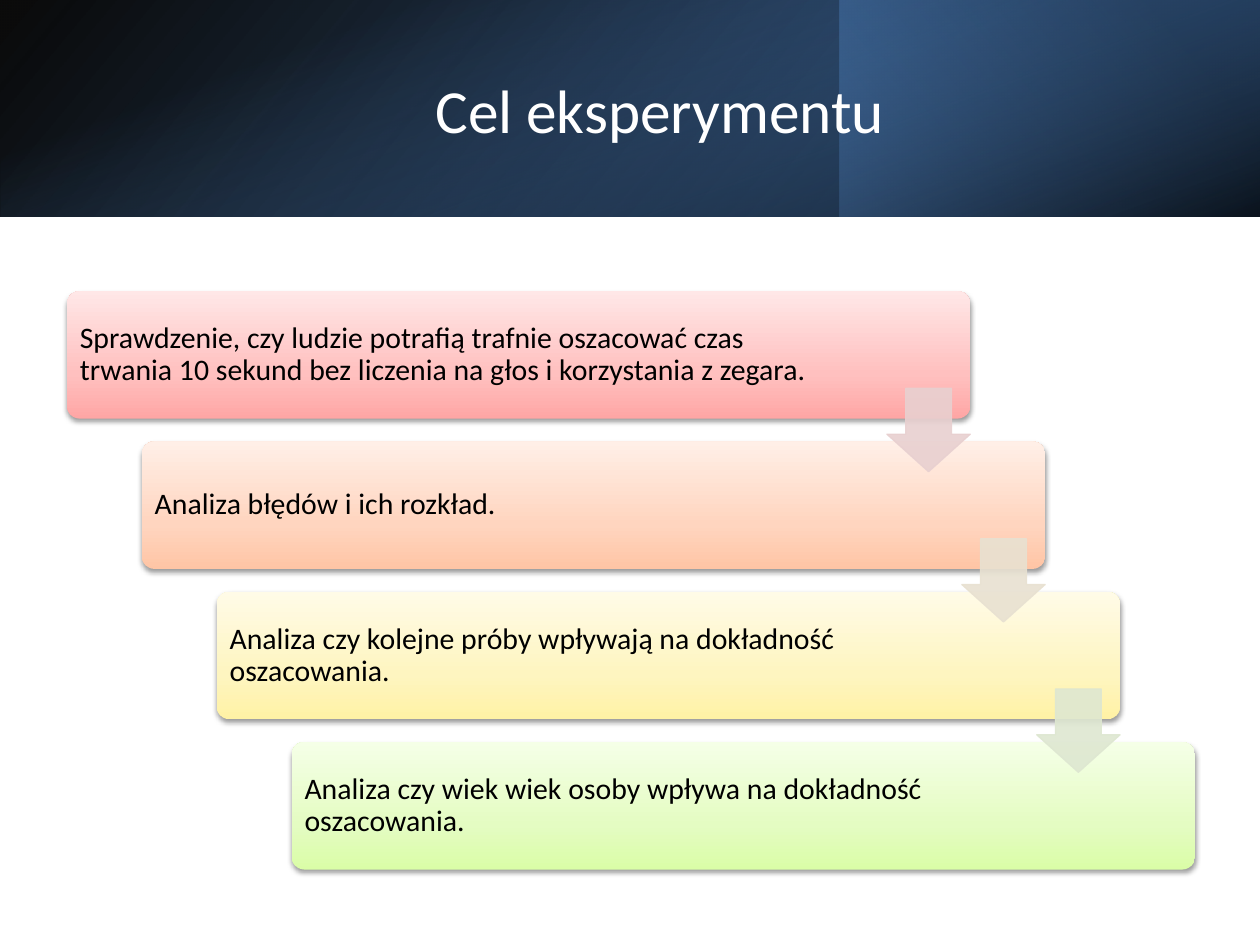
from pptx import Presentation
from pptx.dml.color import RGBColor
from pptx.enum.shapes import MSO_SHAPE
from pptx.enum.text import MSO_ANCHOR, PP_ALIGN
from pptx.oxml import parse_xml
from pptx.oxml.ns import nsdecls, qn
from pptx.util import Cm, Pt

RECTANGLE = MSO_SHAPE.RECTANGLE
ROUNDED = MSO_SHAPE.ROUNDED_RECTANGLE
DOWN_ARROW = MSO_SHAPE.DOWN_ARROW
MIDDLE = MSO_ANCHOR.MIDDLE
LEFT, CENTER = PP_ALIGN.LEFT, PP_ALIGN.CENTER

FONT = "Calibri"
BLACK = RGBColor(0x00, 0x00, 0x00)
WHITE = RGBColor(0xFF, 0xFF, 0xFF)
NAVY = RGBColor(0x37, 0x60, 0x92)
DARK_BLUE = RGBColor(0x25, 0x40, 0x61)
BLUE = RGBColor(0x4F, 0x81, 0xBD)
ROSE = RGBColor(0xE8, 0xD0, 0xD0)
SAND = RGBColor(0xE8, 0xE1, 0xD1)
SAGE = RGBColor(0xDE, 0xE7, 0xD1)
REDS = RGBColor(0xFF, 0xA6, 0xA5), RGBColor(0xFF, 0xC0, 0xBF), RGBColor(0xFF, 0xE7, 0xE7)
ORANGES = RGBColor(0xFF, 0xC5, 0xA5), RGBColor(0xFF, 0xD5, 0xBF), RGBColor(0xFF, 0xEF, 0xE7)
YELLOWS = RGBColor(0xFF, 0xF2, 0xA5), RGBColor(0xFE, 0xF5, 0xC0), RGBColor(0xFF, 0xFB, 0xE7)
GREENS = RGBColor(0xDA, 0xFD, 0xA7), RGBColor(0xE4, 0xFC, 0xC2), RGBColor(0xF5, 0xFF, 0xE7)

HEADING = "Cel eksperymentu"
GOALS = [
    ("Sprawdzenie, czy ludzie potrafią trafnie oszacować czas trwania 10 sekund "
     "bez liczenia na głos i korzystania z zegara.", REDS, 15.24),
    ("Analiza błędów i ich rozkład.", ORANGES, 14.88),
    ("Analiza czy kolejne próby wpływają na dokładność oszacowania.", YELLOWS, 14.88),
    ("Analiza czy wiek wiek osoby wpływa na dokładność oszacowania.", GREENS, 14.88),
]
ARROW_COLORS = [ROSE, SAND, SAGE]
HEADER_LAYERS = [
    ((0, 0, 25.4, 4.37), 0, True, 140, [(0, BLACK, 96), (100, NAVY, 100)]),
    ((16.93, 0, 8.47, 4.37), 180, False, 320, [(19, DARK_BLUE, 68), (100, BLUE, 79)]),
    ((10.52, -10.52, 4.37, 25.4), 90, False, 340, [(23, BLUE, 0), (99, BLACK, 74)]),
]

STEP_LEFT, STEP_TOP = 1.35, 5.87
STEP_DX, STEP_DY = 1.51, 3.03
STEP_WIDTH, STEP_HEIGHT = 18.21, 2.57
TEXT_INSET = 0.08
ARROW_SIZE, ARROW_DROP = 1.68, 1.96
INSET = Cm(0.18)
GOAL_FRAME = dict(word_wrap=True, vertical_anchor=MIDDLE, margin_left=INSET,
                  margin_right=INSET, margin_top=INSET, margin_bottom=INSET)


def set_all(target, values):
    for key, value in values.items():
        setattr(target, key, value)


def write(frame, text, frame_format, paragraph_format, size, color):
    set_all(frame, frame_format)
    paragraph = frame.paragraphs[0]
    set_all(paragraph, paragraph_format)
    run = paragraph.add_run()
    run.text = text
    set_all(run.font, dict(name=FONT, size=Pt(size)))
    run.font.color.rgb = color


def add_plain(shapes, preset, place):
    shape = shapes.add_shape(preset, *map(Cm, place))
    shape.shadow.inherit = False
    shape.line.fill.background()
    return shape


def set_gradient(shape, stops, angle):
    shape.fill.gradient()
    properties = shape._element.spPr
    stop_xml = "".join(
        f'<a:gs pos="{position * 1000}"><a:srgbClr val="{color}">'
        f'<a:alpha val="{alpha * 1000}"/></a:srgbClr></a:gs>'
        for position, color, alpha in stops)
    properties.replace(properties.find(qn("a:gradFill")), parse_xml(
        f'<a:gradFill {nsdecls("a")} rotWithShape="1"><a:gsLst>{stop_xml}</a:gsLst>'
        f'<a:lin ang="{angle * 60000}" scaled="0"/></a:gradFill>'))


def add_shadow(shape):
    shape._element.spPr.find(qn("a:effectLst")).append(parse_xml(
        f'<a:outerShdw {nsdecls("a")} blurRad="40000" dist="20000" dir="5400000" '
        'rotWithShape="0"><a:srgbClr val="000000"><a:alpha val="38000"/>'
        '</a:srgbClr></a:outerShdw>'))


def set_alpha(fill_parent):
    fill_parent.find(qn("a:solidFill"))[0].append(
        parse_xml(f'<a:alpha {nsdecls("a")} val="90000"/>'))


def add_header(slide):
    for place, rotation, flipped, angle, stops in HEADER_LAYERS:
        layer = add_plain(slide.shapes, RECTANGLE, place)
        layer.rotation = rotation
        if flipped:
            layer._element.spPr.find(qn("a:xfrm")).set("flipH", "1")
        set_gradient(layer, stops, angle)
    title = slide.shapes.title
    slide.shapes._spTree.append(title._element)
    set_all(title, dict(left=Cm(2.84), top=Cm(0.97), width=Cm(20.93), height=Cm(2.44)))
    write(title.text_frame, HEADING, dict(word_wrap=True, vertical_anchor=MIDDLE),
          dict(alignment=CENTER), 35, WHITE)


def add_goals(slide):
    steps = slide.shapes.add_group_shape().shapes
    corners = [(STEP_LEFT + i * STEP_DX, STEP_TOP + i * STEP_DY) for i in range(len(GOALS))]
    for (left, top), (goal, tones, text_width) in zip(corners, GOALS):
        card = add_plain(steps, ROUNDED, (left, top, STEP_WIDTH, STEP_HEIGHT))
        card.adjustments[0] = 0.1
        set_gradient(card, [(p, c, 100) for p, c in zip((0, 35, 100), tones)], 270)
        add_shadow(card)
        caption = steps.add_textbox(*map(Cm, (
            left + TEXT_INSET, top + TEXT_INSET, text_width, STEP_HEIGHT - 2 * TEXT_INSET)))
        write(caption.text_frame, goal, GOAL_FRAME,
              dict(alignment=LEFT, line_spacing=0.9), 17, BLACK)
    for (left, top), color in zip(corners, ARROW_COLORS):
        arrow = add_plain(steps, DOWN_ARROW, (
            left + STEP_WIDTH - ARROW_SIZE, top + ARROW_DROP, ARROW_SIZE, ARROW_SIZE))
        arrow.adjustments[0], arrow.adjustments[1] = 0.55, 0.45
        for fill in (arrow.fill, arrow.line.fill):
            fill.solid()
            fill.fore_color.rgb = color
        arrow.line.width = Pt(0.75)
        properties = arrow._element.spPr
        set_alpha(properties)
        set_alpha(properties.find(qn("a:ln")))


def main():
    deck = Presentation()
    set_all(deck, dict(slide_width=Cm(25.4), slide_height=Cm(19.05)))
    slide = deck.slides.add_slide(deck.slide_layouts[5])
    add_header(slide)
    add_goals(slide)
    deck.save("out.pptx")


if __name__ == "__main__":
    main()
